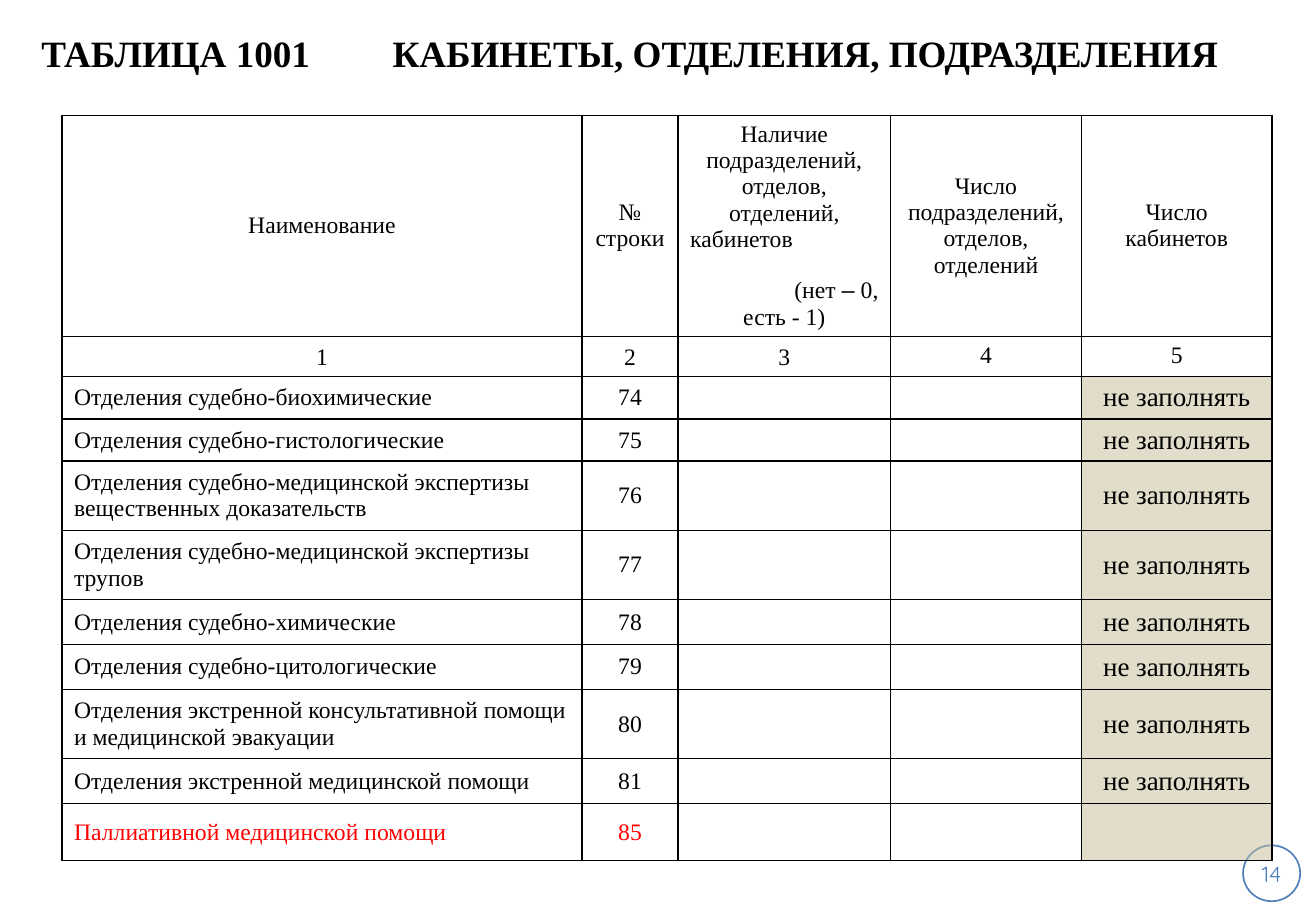
from lxml import etree
from pptx import Presentation
from pptx.dml.color import RGBColor
from pptx.enum.shapes import MSO_SHAPE
from pptx.enum.text import MSO_ANCHOR, PP_ALIGN
from pptx.oxml.ns import qn
from pptx.util import Inches, Pt

LEFT, CENTER, RIGHT = PP_ALIGN.LEFT, PP_ALIGN.CENTER, PP_ALIGN.RIGHT
TOP, MIDDLE, BOTTOM = MSO_ANCHOR.TOP, MSO_ANCHOR.MIDDLE, MSO_ANCHOR.BOTTOM
SERIF = "Times New Roman"
BLACK, RED, BLUE, SAND = "000000", "FF0000", "4F81BD", "C4BD97"


def rgb(code):
    return RGBColor.from_string(code)


def write(para, text, size=14, color=BLACK, face=SERIF, bold=False):
    run = para.add_run()
    run.text = text
    font = run.font
    font.size, font.name, font.bold = Pt(size), face, bold
    font.color.rgb = rgb(color)


prs = Presentation()
prs.slide_width, prs.slide_height = Inches(10.83), Inches(7.5)
slide = prs.slides.add_slide(prs.slide_layouts[5])

# Title, with a tab stop between its two parts
title = slide.shapes.title
title.left, title.top = Inches(0.34), Inches(0)
title.width, title.height = Inches(10.28), Inches(0.86)
frame = title.text_frame
frame.word_wrap = True
frame.vertical_anchor = MIDDLE
frame.margin_left = Inches(0)
para = frame.paragraphs[0]
para.alignment = LEFT
tabs = etree.SubElement(para._p.get_or_add_pPr(), qn("a:tabLst"))
etree.SubElement(tabs, qn("a:tab"), pos=str(Inches(2.89)), algn="l")
write(para, "ТАБЛИЦА 1001\tКАБИНЕТЫ, ОТДЕЛЕНИЯ, ПОДРАЗДЕЛЕНИЯ", 22, bold=True)

# Page number in a circle, behind the table
badge = slide.shapes.add_shape(
    MSO_SHAPE.OVAL, Inches(10.23), Inches(6.96), Inches(0.47), Inches(0.46))
badge.shadow.inherit = False
badge.fill.background()
badge.line.color.rgb = rgb(BLUE)
badge.line.width = Pt(1)
frame = badge.text_frame
frame.margin_left = frame.margin_right = Inches(0)
frame.margin_top = frame.margin_bottom = Inches(0)
frame.vertical_anchor = MIDDLE
frame.paragraphs[0].alignment = CENTER
write(frame.paragraphs[0], "14", 13, BLUE, "Quicksand")

# Table contents
heads = ["Наименование", "№ строки", "", "Число подразделений, отделов, отделений",
         "Число кабинетов"]
units = [
    ("Отделения судебно-биохимические", "74"),
    ("Отделения судебно-гистологические", "75"),
    ("Отделения судебно-медицинской экспертизы вещественных доказательств", "76"),
    ("Отделения судебно-медицинской экспертизы трупов", "77"),
    ("Отделения судебно-химические", "78"),
    ("Отделения судебно-цитологические", "79"),
    ("Отделения экстренной консультативной помощи и медицинской эвакуации", "80"),
    ("Отделения экстренной медицинской помощи", "81"),
    ("Паллиативной медицинской помощи", "85"),
]
rows = [heads, ["1", "2", "3", "4", "5"]]
rows += [[name, code, "", "", "не заполнять"] for name, code in units]
last = len(rows) - 1
rows[last][4] = ""
widths = [4.28, 0.79, 1.75, 1.57, 1.57]
heights = [1.82, 0.33, 0.35, 0.34, 0.57, 0.57, 0.37, 0.37, 0.57, 0.37, 0.47]

# Table grid
table = slide.shapes.add_table(
    len(rows), len(widths), Inches(0.51), Inches(0.95),
    Inches(sum(widths)), Inches(sum(heights))).table
table.first_row = table.horz_banding = False
for col, width in zip(table.columns, widths):
    col.width = Inches(width)
for row, height in zip(table.rows, heights):
    row.height = Inches(height)

# Cells: borders, fill and text
for r, texts in enumerate(rows):
    for c, text in enumerate(texts):
        cell = table.cell(r, c)
        props = cell._tc.get_or_add_tcPr()
        for side in ("a:lnL", "a:lnR", "a:lnT", "a:lnB"):
            edge = etree.SubElement(props, qn(side), w=str(Pt(1)))
            paint = etree.SubElement(edge, qn("a:solidFill"))
            etree.SubElement(paint, qn("a:srgbClr"), val=BLACK)
        if r > 1 and c == 4:
            cell.fill.solid()
            cell.fill.fore_color.rgb = rgb(SAND)
            shade = props.find(qn("a:solidFill")).find(qn("a:srgbClr"))
            etree.SubElement(shade, qn("a:alpha"), val="50000")
        else:
            cell.fill.background()
        cell.vertical_anchor = MIDDLE
        if r == 1:
            cell.vertical_anchor = BOTTOM if c < 3 else TOP
        if not text:
            cell.margin_top = cell.margin_bottom = Inches(0)
            continue
        para = cell.text_frame.paragraphs[0]
        para.alignment = LEFT if r > 1 and c == 0 else CENTER
        write(para, text, 16 if r > 1 and c == 4 else 14,
              RED if r == last else BLACK)

# Heading of the third column, with its own alignment per line
head = table.cell(0, 2)
head.margin_top = head.margin_bottom = Inches(0.05)
lines = [
    (CENTER, 0, [("Наличие подразделений, отделов, отделений,", SERIF)]),
    (LEFT, 0, [("кабинетов", SERIF)]),
    (RIGHT, 15, [("(нет ", SERIF), ("–", "Arial"), (" 0,", SERIF)]),
    (CENTER, 0, [("есть - 1)", SERIF)]),
]
for i, (align, gap, runs) in enumerate(lines):
    frame = head.text_frame
    para = frame.add_paragraph() if i else frame.paragraphs[0]
    para.alignment = align
    if gap:
        para.space_before = Pt(gap)
    for text, face in runs:
        write(para, text, face=face)

prs.save("out.pptx")
